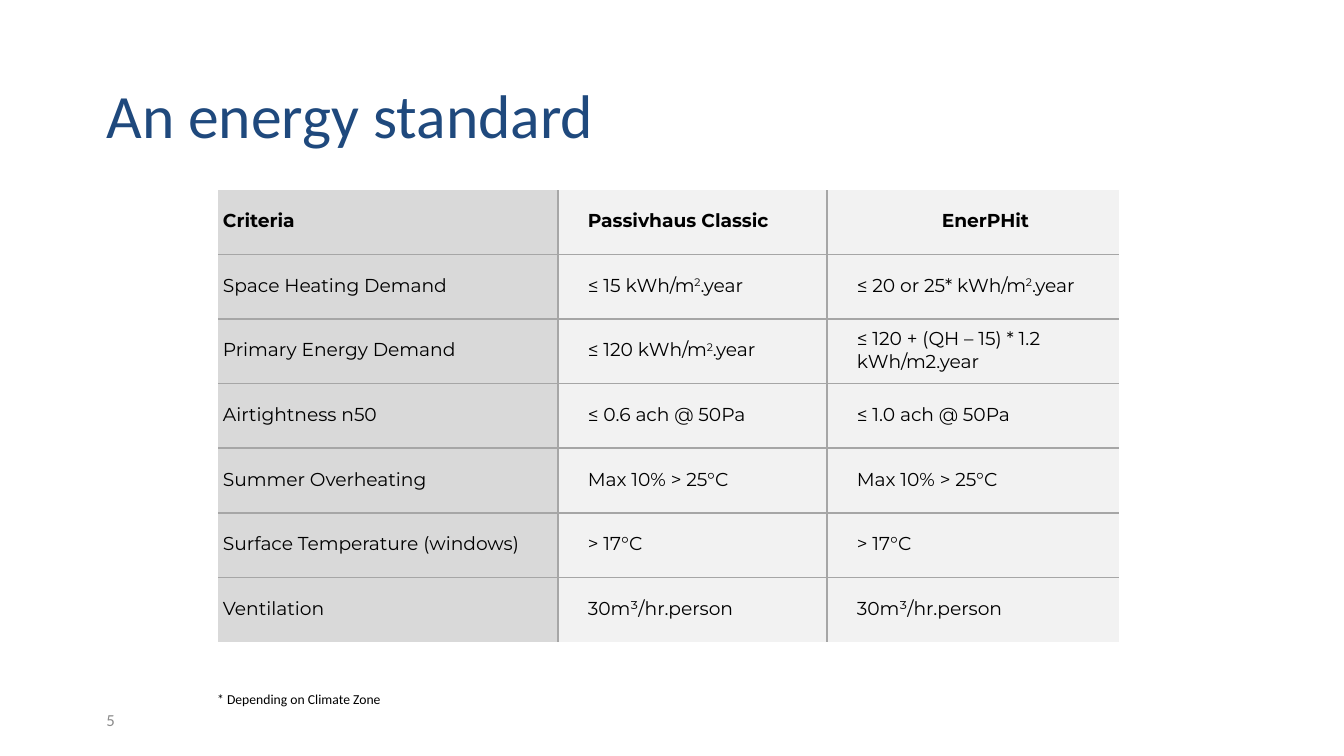
"""Build a slide with a table of energy standard criteria."""
from dataclasses import dataclass

from pptx import Presentation
from pptx.dml.color import RGBColor as Rgb
from pptx.enum.text import MSO_ANCHOR as Anchor, MSO_AUTO_SIZE as AutoSize, PP_ALIGN as Align
from pptx.oxml import parse_xml
from pptx.oxml.ns import nsdecls
from pptx.util import Pt

SCALE = 9144000 / 1344
COLORS = {
    "title": "1F497D",
    "number": "8C8C8C",
    "text": "000000",
    "label": "D9D9D9",
    "value": "F2F2F2",
    "rule": "A6A6A6",
}
NO_STYLE = "{2D5ABB26-0587-4C30-8999-92F81FD0307C}"


@dataclass(frozen=True)
class Area:
    left: int
    top: int
    width: int
    height: int


@dataclass(frozen=True)
class Criterion:
    name: str
    classic: str
    retrofit: str


CRITERIA = [
    Criterion("Criteria", "Passivhaus Classic", "EnerPHit"),
    Criterion("Space Heating Demand", "≤ 15 kWh/m^2^.year", "≤ 20 or 25* kWh/m^2^.year"),
    Criterion("Primary Energy Demand", "≤ 120 kWh/m^2^.year", "≤ 120 + (QH – 15) * 1.2 kWh/m2.year"),
    Criterion("Airtightness n50", "≤ 0.6 ach @ 50Pa", "≤ 1.0 ach @ 50Pa"),
    Criterion("Summer Overheating", "Max 10% > 25°C", "Max 10% > 25°C"),
    Criterion("Surface Temperature (windows)", "> 17°C", "> 17°C"),
    Criterion("Ventilation", "30m³/hr.person", "30m³/hr.person"),
]
TITLE_AREA = Area(93, 40, 1159, 146)
NUMBER_AREA = Area(93, 700, 302, 40)
TABLE_AREA = Area(218, 190, 901, 452)
NOTE_AREA = Area(204, 684, 363, 30)
COLUMN_WIDTHS = [340, 269, 292]


def px(length: float) -> int:
    """Turn px into EMU."""
    return round(length * SCALE)


def place(area: Area) -> tuple[int, int, int, int]:
    """Give the left, top, width and height of an area in EMU."""
    return px(area.left), px(area.top), px(area.width), px(area.height)


def write(frame, text: str, *, size: float, color: str = "text", font: str = "Calibri",
          bold: bool = False, align: Align = Align.LEFT, indent: int = 0,
          spacing: float = 1.0) -> None:
    """Write one paragraph, with superscripts between carets."""
    frame.word_wrap = True
    para = frame.paragraphs[0]
    para.alignment = align
    para.line_spacing = spacing
    if indent:
        properties = para._p.get_or_add_pPr()
        properties.set("marL", str(px(indent)))
        properties.set("indent", "0")
    for index, part in enumerate(text.split("^")):
        span = para.add_run()
        span.text = part
        span.font.size = Pt(size)
        span.font.name = font
        span.font.bold = bold
        span.font.color.rgb = Rgb.from_string(COLORS[color])
        if index % 2:
            span.font._element.set("baseline", "30000")


def add_box(page, area: Area, text: str, anchor: Anchor, **style) -> None:
    """Add a text box."""
    frame = page.shapes.add_textbox(*place(area)).text_frame
    frame.vertical_anchor = anchor
    write(frame, text, **style)


def rule_cell(cell, sides: str) -> None:
    """Draw the named sides of a cell, in the order L, R, T, B."""
    properties = cell._tc.get_or_add_tcPr()
    for index, side in enumerate(sides):
        properties.insert(index, parse_xml(
            f'<a:ln{side} {nsdecls("a")} w="{Pt(1)}"><a:solidFill>'
            f'<a:srgbClr val="{COLORS["rule"]}"/></a:solidFill></a:ln{side}>'))


def add_criteria(page, area: Area, criteria: list[Criterion]) -> None:
    """Add the criteria table with rules between its cells."""
    last_row, last_column = len(criteria) - 1, len(COLUMN_WIDTHS) - 1
    table = page.shapes.add_table(len(criteria), len(COLUMN_WIDTHS), *place(area)).table
    table.first_row = table.horz_banding = False
    table._tbl.tblPr.find("{*}tableStyleId").text = NO_STYLE
    for column, width in zip(table.columns, COLUMN_WIDTHS):
        column.width = px(width)
    for row, criterion in enumerate(criteria):
        table.rows[row].height = px(area.height / len(criteria))
        for column, text in enumerate((criterion.name, criterion.classic, criterion.retrofit)):
            cell = table.cell(row, column)
            cell.vertical_anchor = Anchor.MIDDLE
            cell.margin_left = cell.margin_right = cell.margin_bottom = px(5)
            cell.margin_top = px(3)
            cell.fill.solid()
            cell.fill.fore_color.rgb = Rgb.from_string(COLORS["value" if column else "label"])
            inner = {"L": column > 0, "R": column < last_column, "T": row > 0, "B": row < last_row}
            rule_cell(cell, "".join(side for side, drawn in inner.items() if drawn))
            centred = row == 0 and column == last_column
            write(cell.text_frame, text, size=10, font="Montserrat", bold=row == 0,
                  align=Align.CENTER if centred else Align.LEFT, indent=25 if column else 0)


def main() -> None:
    """Build and save the deck."""
    deck = Presentation()
    deck.slide_width, deck.slide_height = px(1344), px(756)
    page = deck.slides.add_slide(deck.slide_layouts[5])
    title = page.shapes.title
    title.left, title.top, title.width, title.height = place(TITLE_AREA)
    title.text_frame.auto_size = AutoSize.NONE
    title.text_frame.vertical_anchor = Anchor.MIDDLE
    write(title.text_frame, "An energy standard", size=33, color="title", spacing=1.02)
    add_box(page, NUMBER_AREA, "5", Anchor.MIDDLE, size=9, color="number")
    add_criteria(page, TABLE_AREA, CRITERIA)
    add_box(page, NOTE_AREA, "* Depending on Climate Zone", Anchor.TOP, size=7.3)
    deck.save("out.pptx")


if __name__ == "__main__":
    main()
